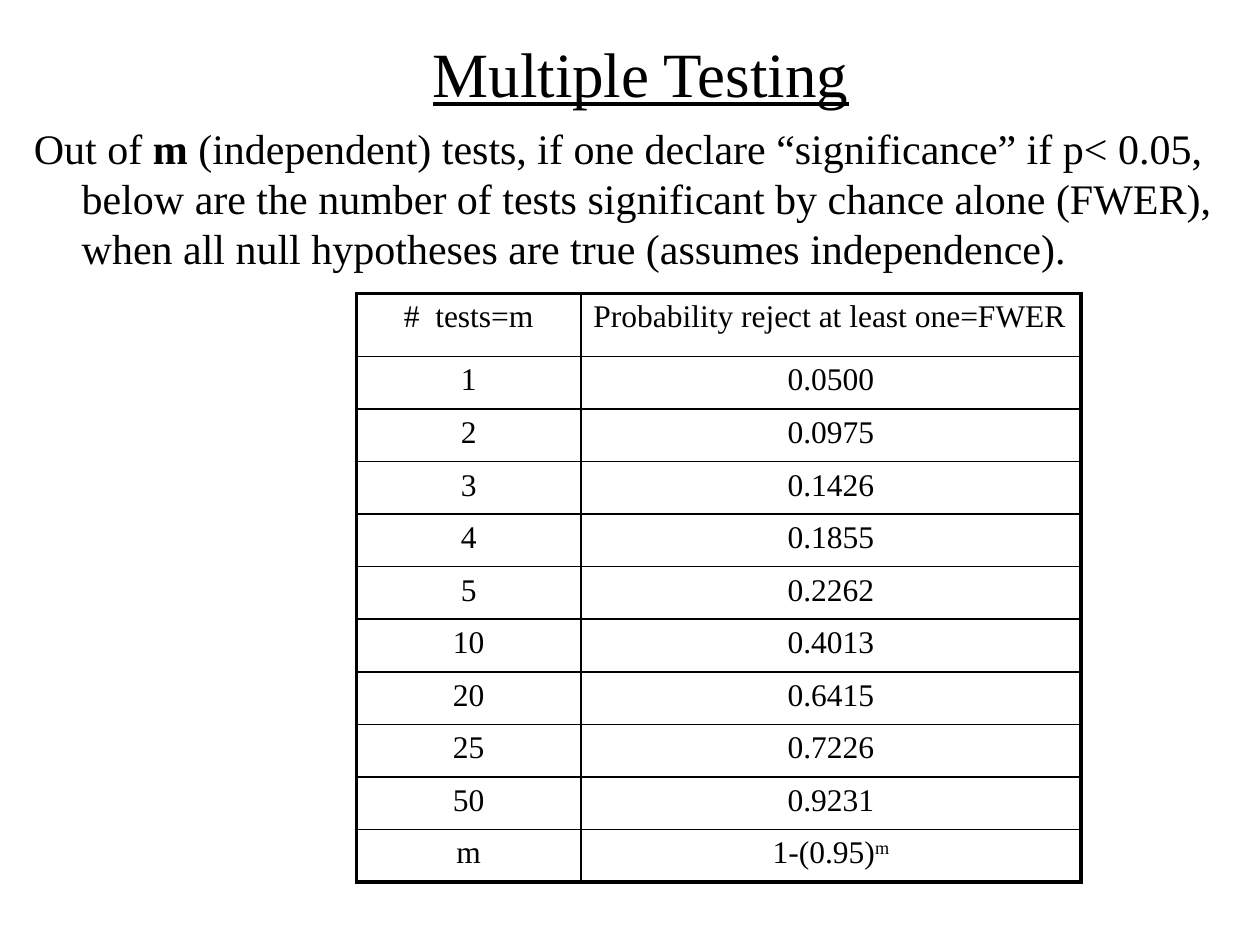
"""Build the Multiple Testing slide with its table of family-wise error rates."""
import pptx
import pptx.util
import pptx.dml.color
import pptx.enum.text
import pptx.oxml
import pptx.oxml.ns

Inches, Pt = pptx.util.Inches, pptx.util.Pt
ALIGN, ANCHOR = pptx.enum.text.PP_ALIGN, pptx.enum.text.MSO_ANCHOR
BLACK = pptx.dml.color.RGBColor(0, 0, 0)
FONT = "Times New Roman"
THIN, THICK = 1, 2.25

TITLE = "Multiple Testing"
BODY = [
    ("Out of ", False),
    ("m", True),
    (" (independent) tests, if one declare “significance” if p< 0.05,  below are the number "
     "of tests significant by chance alone (FWER), when all null hypotheses are true "
     "(assumes independence).", False),
]
ROWS = [
    ("#  tests=m", "Probability reject at least one=FWER"),
    ("1", "0.0500"),
    ("2", "0.0975"),
    ("3", "0.1426"),
    ("4", "0.1855"),
    ("5", "0.2262"),
    ("10", "0.4013"),
    ("20", "0.6415"),
    ("25", "0.7226"),
    ("50", "0.9231"),
    ("m", "1-(0.95)"),
]
EXPONENT = "m"
COL_WIDTHS = (1.78, 3.97)
HEAD_HEIGHT, ROW_HEIGHT = 0.5, 0.417


def box(left, top, width, height):
    return [Inches(v) for v in (left, top, width, height)]


def style(p, size, align=ALIGN.LEFT):
    p.font.name, p.font.size = FONT, Pt(size)
    p.font.color.rgb = BLACK
    p.alignment = align


def add_border(cell, side, width):
    ns = pptx.oxml.ns.nsdecls("a")
    cell._tc.get_or_add_tcPr().append(pptx.oxml.parse_xml(
        f'<a:ln{side} {ns} w="{Pt(width)}"><a:solidFill><a:srgbClr val="{BLACK}"/>'
        f'</a:solidFill></a:ln{side}>'))


def add_title(s):
    sp = s.shapes.title
    sp.left, sp.top, sp.width, sp.height = box(0.67, 0.22, 8.83, 0.7)
    tf = sp.text_frame
    tf.text, tf.vertical_anchor = TITLE, ANCHOR.MIDDLE
    style(tf.paragraphs[0], 36, ALIGN.CENTER)
    tf.paragraphs[0].font.underline = True


def add_body(s):
    tf = s.shapes.add_textbox(*box(0.17, 0.92, 9.75, 1.42)).text_frame
    tf.word_wrap = True
    p = tf.paragraphs[0]
    style(p, 24)
    p.space_before = Pt(4.8)
    indent = Inches(0.38)
    pPr = p._p.get_or_add_pPr()
    pPr.set("marL", str(indent))
    pPr.set("indent", str(-indent))
    for text, bold in BODY:
        r = p.add_run()
        r.text, r.font.bold = text, bold


def add_table(s):
    last_row, last_col = len(ROWS) - 1, len(COL_WIDTHS) - 1
    height = HEAD_HEIGHT + ROW_HEIGHT * last_row
    table = s.shapes.add_table(len(ROWS), len(COL_WIDTHS),
                               *box(2.83, 2.33, sum(COL_WIDTHS), height)).table
    table.first_row = table.horz_banding = False
    for column, width in zip(table.columns, COL_WIDTHS):
        column.width = Inches(width)
    for i, values in enumerate(ROWS):
        table.rows[i].height = Inches(ROW_HEIGHT if i else HEAD_HEIGHT)
        for j, value in enumerate(values):
            cell = table.cell(i, j)
            outer = {"L": j == 0, "R": j == last_col, "T": i == 0, "B": i == last_row}
            for side, is_outer in outer.items():
                add_border(cell, side, THICK if is_outer else THIN)
            cell.fill.background()
            cell.text = value
            p = cell.text_frame.paragraphs[0]
            style(p, 18, ALIGN.LEFT if (i, j) == (0, last_col) else ALIGN.CENTER)
            p.space_before = Pt(3.6)
    r = table.cell(last_row, last_col).text_frame.paragraphs[0].add_run()
    r.text = EXPONENT
    r.font._element.set("baseline", "30000")


def main():
    prs = pptx.Presentation()
    prs.slide_width, prs.slide_height = Inches(10), Inches(7.5)
    s = prs.slides.add_slide(prs.slide_layouts[5])
    add_title(s)
    add_body(s)
    add_table(s)
    prs.save("out.pptx")


if __name__ == "__main__":
    main()
